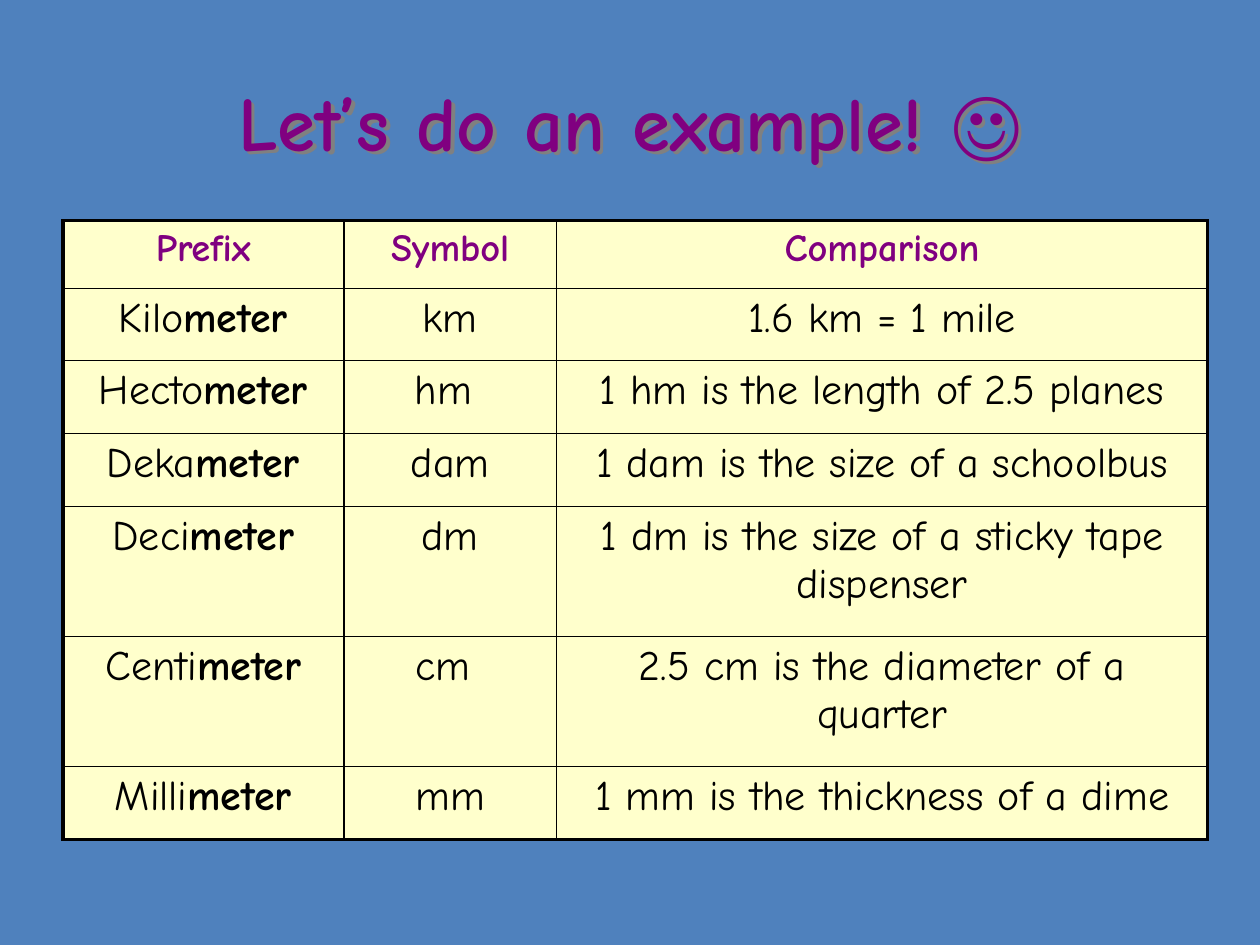
from typing import NamedTuple

from lxml.etree import SubElement
from pptx import Presentation
from pptx.dml.color import RGBColor
from pptx.enum.text import MSO_ANCHOR as Anchor, PP_ALIGN as Align
from pptx.oxml.ns import qn
from pptx.util import Cm, Pt

FONT = "Comic Neue"
BLUE, PURPLE, CREAM, BLACK, GRAY = "4F81BD", "800080", "FFFFCC", "000000", "808080"
THICK, THIN = Pt(2.25), Pt(1)
COLUMN_WIDTHS = (5.66, 4.29, 13.12)
ROW_HEIGHTS = (1.37, 1.45, 1.47, 1.47, 2.62, 2.62, 1.47)
HEADINGS = ("Prefix", "Symbol", "Comparison")


class Unit(NamedTuple):
    prefix: str
    symbol: str
    comparison: str


UNITS = (
    Unit("Kilo", "km", "1.6 km = 1 mile"),
    Unit("Hecto", "hm ", "1 hm is the length of 2.5 planes"),
    Unit("Deka", "dam", "1 dam is the size of a schoolbus"),
    Unit("Deci", "dm", "1 dm is the size of a sticky tape dispenser"),
    Unit("Centi", "cm ", "2.5 cm is the diameter of a quarter"),
    Unit("Milli", "mm", "1 mm is the thickness of a dime"),
)


def set_fill(fill, color: str) -> None:
    fill.solid()
    fill.fore_color.rgb = RGBColor.from_string(color)


def add_text(paragraph, text: str, *, size: float = 24, color: str = BLACK,
             bold: bool = False) -> None:
    paragraph.alignment = Align.CENTER
    run = paragraph.add_run()
    run.text = text
    run.font.size, run.font.bold, run.font.name = Pt(size), bold, FONT
    set_fill(run.font.fill, color)


def add_shadow(shape, color: str) -> None:
    """Cast a sharp shadow down and right; on an unfilled box it falls from the text."""
    effects = SubElement(shape._element.spPr, qn("a:effectLst"))
    shadow = SubElement(effects, qn("a:outerShdw"), blurRad="0", dist=str(Pt(3)),
                        dir="2700000", algn="tl", rotWithShape="0")
    SubElement(shadow, qn("a:srgbClr"), val=color)


def set_borders(cell, **widths: int) -> None:
    """Draw black borders; keys are L, R, T and B, in that schema order."""
    properties = cell._tc.get_or_add_tcPr()
    for position, (side, width) in enumerate(widths.items()):
        line = SubElement(properties, qn(f"a:ln{side}"), w=str(width))
        fill = SubElement(line, qn("a:solidFill"))
        SubElement(fill, qn("a:srgbClr"), val=BLACK)
        properties.insert(position, line)


def add_title(slide, text: str) -> None:
    box = slide.shapes.add_textbox(Cm(1.27), Cm(0.84), Cm(22.86), Cm(3.18))
    add_shadow(box, GRAY)
    frame = box.text_frame
    frame.word_wrap = True
    frame.vertical_anchor = Anchor.MIDDLE
    add_text(frame.paragraphs[0], text, size=44, color=PURPLE, bold=True)


def add_unit_table(slide) -> None:
    rows, columns = len(ROW_HEIGHTS), len(COLUMN_WIDTHS)
    table = slide.shapes.add_table(
        rows, columns, Cm(1.27), Cm(4.45),
        Cm(sum(COLUMN_WIDTHS)), Cm(sum(ROW_HEIGHTS))).table
    table.first_row = table.horz_banding = False
    for column, width in zip(table.columns, COLUMN_WIDTHS):
        column.width = Cm(width)
    for row, height in zip(table.rows, ROW_HEIGHTS):
        row.height = Cm(height)

    for r, texts in enumerate((HEADINGS, *UNITS)):
        for c, text in enumerate(texts):
            cell = table.cell(r, c)
            set_fill(cell.fill, CREAM)
            set_borders(cell,
                        L=THICK if c == 0 else THIN,
                        R=THICK if c == columns - 1 else THIN,
                        T=THICK if r == 0 else THIN,
                        B=THICK if r == rows - 1 else THIN)
            paragraph = cell.text_frame.paragraphs[0]
            if r == 0:
                paragraph.space_before = Pt(4.4)
                add_text(paragraph, text, size=22, color=PURPLE, bold=True)
                continue
            paragraph.space_before = Pt(4.8)
            add_text(paragraph, text)
            if c == 0:
                add_text(paragraph, "meter", bold=True)


def main() -> None:
    presentation = Presentation()
    presentation.slide_width, presentation.slide_height = Cm(25.4), Cm(19.05)
    slide = presentation.slides.add_slide(presentation.slide_layouts[6])
    set_fill(slide.background.fill, BLUE)
    add_title(slide, "Let’s do an example! ☺")
    add_unit_table(slide)
    presentation.save("out.pptx")


if __name__ == "__main__":
    main()
